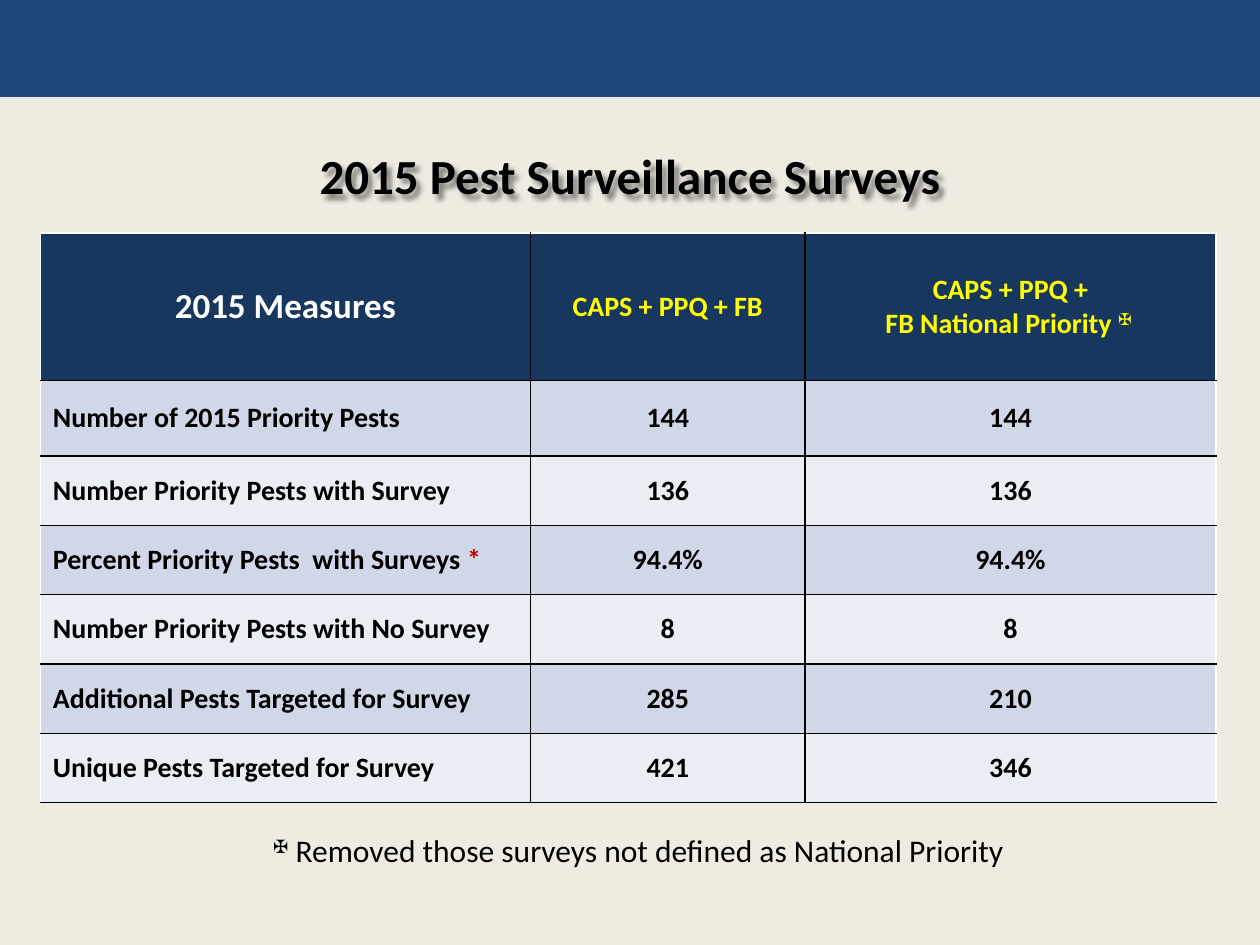
from dataclasses import dataclass

from lxml.etree import SubElement
from pptx import Presentation
from pptx.dml.color import RGBColor
from pptx.enum.shapes import MSO_SHAPE
from pptx.enum.text import MSO_ANCHOR, PP_ALIGN
from pptx.oxml.ns import qn
from pptx.util import Inches, Pt


@dataclass(frozen=True)
class Theme:
    font: str = "Calibri"
    background: str = "EEECE1"
    banner: str = "1F497D"
    header: str = "17375E"
    bands: tuple[str, str] = ("D0D8E8", "E9EDF4")
    black: str = "000000"
    white: str = "FFFFFF"
    yellow: str = "FFFF00"
    red: str = "C00000"
    title_size: int = 28
    measure_size: int = 20
    note_size: int = 18
    body_size: int = 16


THEME = Theme()


@dataclass(frozen=True)
class TextRun:
    text: str
    color: str = THEME.black
    size: int = THEME.body_size
    bold: bool = True
    raised: bool = False


@dataclass(frozen=True)
class Measure:
    label: str
    all_surveys: str
    national_priority: str
    mark: str = ""


MEASURES = [
    Measure("Number of 2015 Priority Pests", "144", "144"),
    Measure("Number Priority Pests with Survey", "136", "136"),
    Measure("Percent Priority Pests  with Surveys ", "94.4%", "94.4%", "*"),
    Measure("Number Priority Pests with No Survey", "8", "8"),
    Measure("Additional Pests Targeted for Survey", "285", "210"),
    Measure("Unique Pests Targeted for Survey", "421", "346"),
]
COLUMN_WIDTHS = [3.89, 2.18, 3.26]
ROW_HEIGHTS = [1.17, 0.6] + [0.55] * 5


def write_lines(text_frame, lines: list[list[TextRun]], alignment: PP_ALIGN) -> None:
    for index, line in enumerate(lines):
        paragraph = text_frame.add_paragraph() if index else text_frame.paragraphs[0]
        paragraph.alignment = alignment
        for item in line:
            run = paragraph.add_run()
            run.text = item.text
            run.font.name = THEME.font
            run.font.size = Pt(item.size)
            run.font.bold = item.bold
            run.font.color.rgb = RGBColor.from_string(item.color)
            if item.raised:
                run.font._element.set("baseline", "30000")


def add_title(slide) -> None:
    shape = slide.shapes.add_textbox(Inches(0.5), Inches(1), Inches(9), Inches(0.78))
    shape.text_frame.word_wrap = True
    shape.text_frame.vertical_anchor = MSO_ANCHOR.MIDDLE
    title = TextRun("2015 Pest Surveillance Surveys", size=THEME.title_size)
    write_lines(shape.text_frame, [[title]], PP_ALIGN.CENTER)
    effects = SubElement(shape._element.spPr, qn("a:effectLst"))
    shadow = SubElement(effects, qn("a:outerShdw"), blurRad="38100", dist="38100",
                        dir="2700000", algn="tl")
    color = SubElement(shadow, qn("a:srgbClr"), val=THEME.black)
    SubElement(color, qn("a:alpha"), val="43000")


def set_borders(cell, colors: dict[str, str]) -> None:
    properties = cell._tc.get_or_add_tcPr()
    for side, color in colors.items():
        line = SubElement(properties, qn(f"a:ln{side}"), w=str(Pt(1)))
        fill = SubElement(line, qn("a:solidFill"))
        SubElement(fill, qn("a:srgbClr"), val=color)


def table_rows() -> list[list[list[list[TextRun]]]]:
    header = [
        [[TextRun("2015 Measures", THEME.white, THEME.measure_size)]],
        [[TextRun("CAPS + PPQ + FB", THEME.yellow)]],
        [[TextRun("CAPS + PPQ +", THEME.yellow)],
         [TextRun("FB National Priority ", THEME.yellow),
          TextRun("✠ ", THEME.yellow, raised=True)]],
    ]
    rows = [header]
    for measure in MEASURES:
        label = [TextRun(measure.label)]
        if measure.mark:
            label.append(TextRun(measure.mark, THEME.red))
        rows.append([[label], [[TextRun(measure.all_surveys)]],
                     [[TextRun(measure.national_priority)]]])
    return rows


def add_measures_table(slide) -> None:
    table = slide.shapes.add_table(
        len(ROW_HEIGHTS), len(COLUMN_WIDTHS), Inches(0.32), Inches(1.85),
        Inches(sum(COLUMN_WIDTHS)), Inches(sum(ROW_HEIGHTS))).table
    for column, width in zip(table.columns, COLUMN_WIDTHS):
        column.width = Inches(width)
    for row, height in zip(table.rows, ROW_HEIGHTS):
        row.height = Inches(height)
    last_column = len(COLUMN_WIDTHS) - 1
    for row_index, row in enumerate(table_rows()):
        for column_index, lines in enumerate(row):
            cell = table.cell(row_index, column_index)
            is_header, is_label = row_index == 0, column_index == 0
            set_borders(cell, {
                "L": THEME.white if is_label else THEME.black,
                "R": THEME.white if column_index == last_column else THEME.black,
                "T": THEME.white if is_header else THEME.black,
                "B": THEME.black,
            })
            cell.fill.solid()
            color = THEME.header if is_header else THEME.bands[(row_index - 1) % 2]
            cell.fill.fore_color.rgb = RGBColor.from_string(color)
            cell.vertical_anchor = MSO_ANCHOR.MIDDLE
            if not is_header and not is_label:
                cell.margin_left = cell.margin_right = Inches(0)
                cell.margin_top = cell.margin_bottom = Inches(0)
            alignment = PP_ALIGN.LEFT if is_label and not is_header else PP_ALIGN.CENTER
            write_lines(cell.text_frame, lines, alignment)


def add_footnote(slide) -> None:
    shape = slide.shapes.add_textbox(Inches(2.07), Inches(6.55), Inches(6.06), Inches(0.4))
    shape.text_frame.word_wrap = False
    write_lines(shape.text_frame, [[
        TextRun("✠", size=THEME.note_size, bold=False, raised=True),
        TextRun(" Removed those surveys not defined as National Priority",
                size=THEME.note_size, bold=False),
    ]], PP_ALIGN.LEFT)


def main() -> None:
    presentation = Presentation()
    presentation.slide_width, presentation.slide_height = Inches(10), Inches(7.5)
    slide = presentation.slides.add_slide(presentation.slide_layouts[6])
    slide.background.fill.solid()
    slide.background.fill.fore_color.rgb = RGBColor.from_string(THEME.background)
    banner = slide.shapes.add_shape(
        MSO_SHAPE.RECTANGLE, Inches(0), Inches(0), Inches(10), Inches(0.77))
    banner.shadow.inherit = False
    banner.fill.solid()
    banner.fill.fore_color.rgb = RGBColor.from_string(THEME.banner)
    banner.line.fill.background()
    add_title(slide)
    add_measures_table(slide)
    add_footnote(slide)
    presentation.save("out.pptx")


if __name__ == "__main__":
    main()
